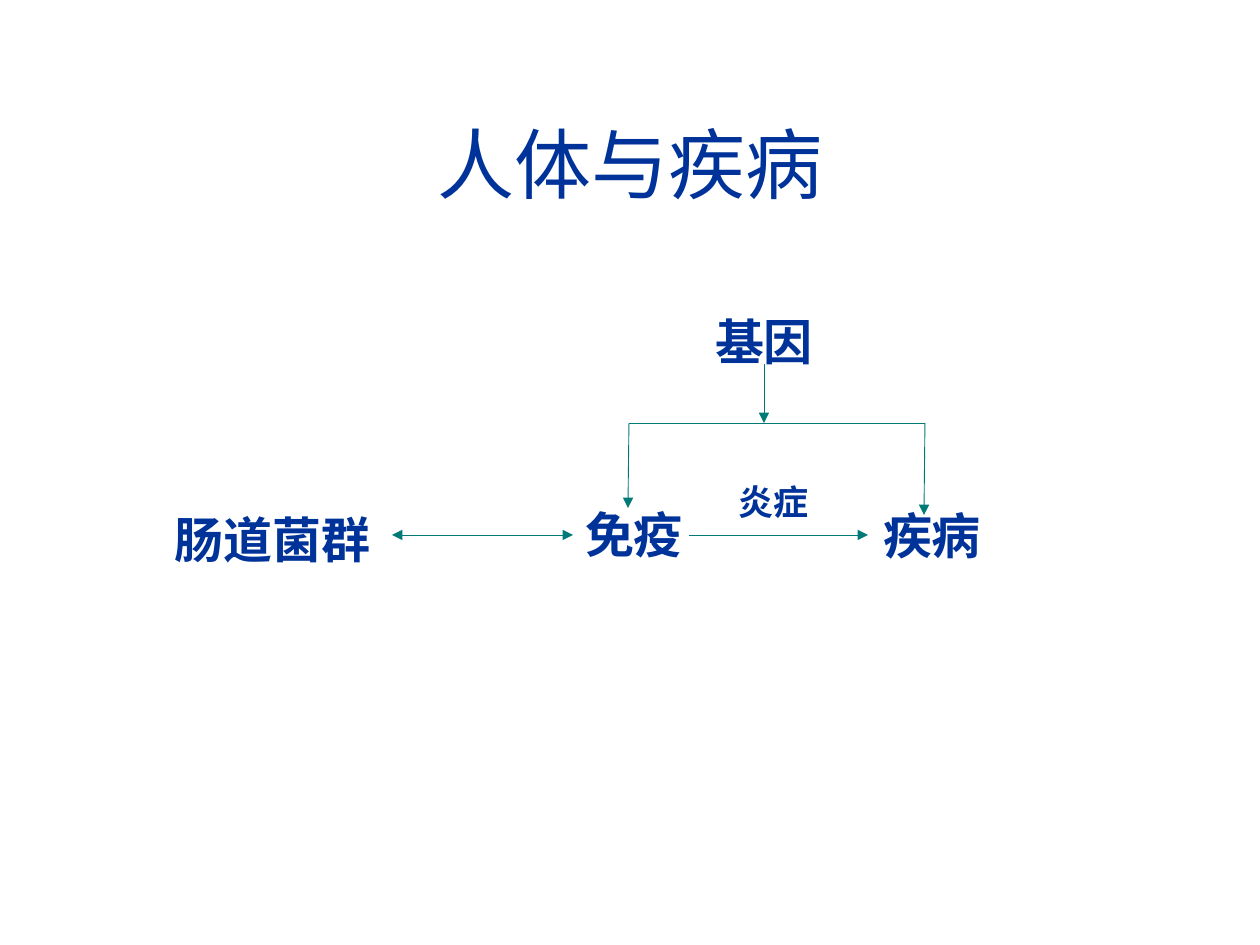
from typing import NamedTuple

from lxml.etree import SubElement
from pptx import Presentation
from pptx.dml.color import RGBColor
from pptx.enum.shapes import MSO_CONNECTOR as Conn
from pptx.enum.text import MSO_ANCHOR as Anchor, PP_ALIGN as Align
from pptx.oxml.ns import qn
from pptx.util import Emu, Pt

EMU_PER_PX = 914400 / 126
NAVY = "003399"
TEAL = "007A77"


class Label(NamedTuple):
    text: str
    x: int
    y: int
    w: int = 208
    h: int = 127
    size: int = 28


class Link(NamedTuple):
    x1: int
    y1: int
    x2: int
    y2: int
    ends: tuple[str, ...] = ("tailEnd",)


TITLE = Label("人体与疾病", 42, 84, 1177, 158, 44)
LABELS = [
    Label("肠道菌群", 134, 475, w=277),
    Label("免疫", 530, 470),
    Label("疾病", 828, 471),
    Label("基因", 660, 275, h=131),
    Label("炎症", 670, 438, size=20),
]
LINKS = [
    Link(689, 535, 868, 535),
    Link(925, 423, 924, 515),
    Link(629, 423, 628, 508),
    Link(629, 423, 925, 423, ends=()),
    Link(764, 364, 764, 423),
    Link(392, 535, 573, 535, ends=("headEnd", "tailEnd")),
]


def px(n: int) -> Emu:
    """Turn pixels into EMU."""
    return Emu(round(n * EMU_PER_PX))


def color(value: str) -> RGBColor:
    """Turn a hex string into a colour."""
    return RGBColor.from_string(value)


def write_label(sp, label: Label, bold: bool) -> None:
    """Place a text shape and write its centred text."""
    sp.left, sp.top, sp.width, sp.height = map(px, label[1:5])
    tf = sp.text_frame
    tf.word_wrap = True
    tf.vertical_anchor = Anchor.MIDDLE
    p = tf.paragraphs[0]
    p.text = label.text
    p.alignment = Align.CENTER
    p.font.name = "Arial"
    p.font.size = Pt(label.size)
    p.font.bold = bold
    p.font.color.rgb = color(NAVY)


def add_link(s, link: Link) -> None:
    """Draw a thin line with its arrowheads."""
    sp = s.shapes.add_connector(Conn.STRAIGHT, *map(px, link[:4]))
    sp.line.width = Pt(0.5)
    sp.line.color.rgb = color(TEAL)
    ln = sp.line._get_or_add_ln()
    for end in link.ends:
        SubElement(ln, qn(f"a:{end}"), type="triangle")
    SubElement(sp._element.spPr, qn("a:effectLst"))


def main() -> None:
    """Build the slide and save it."""
    prs = Presentation()
    prs.slide_width, prs.slide_height = px(1260), px(945)
    s = prs.slides.add_slide(prs.slide_layouts[5])
    write_label(s.shapes.title, TITLE, bold=False)
    for label in LABELS:
        write_label(s.shapes.add_textbox(0, 0, 0, 0), label, bold=True)
    for link in LINKS:
        add_link(s, link)
    prs.save("out.pptx")


if __name__ == "__main__":
    main()
